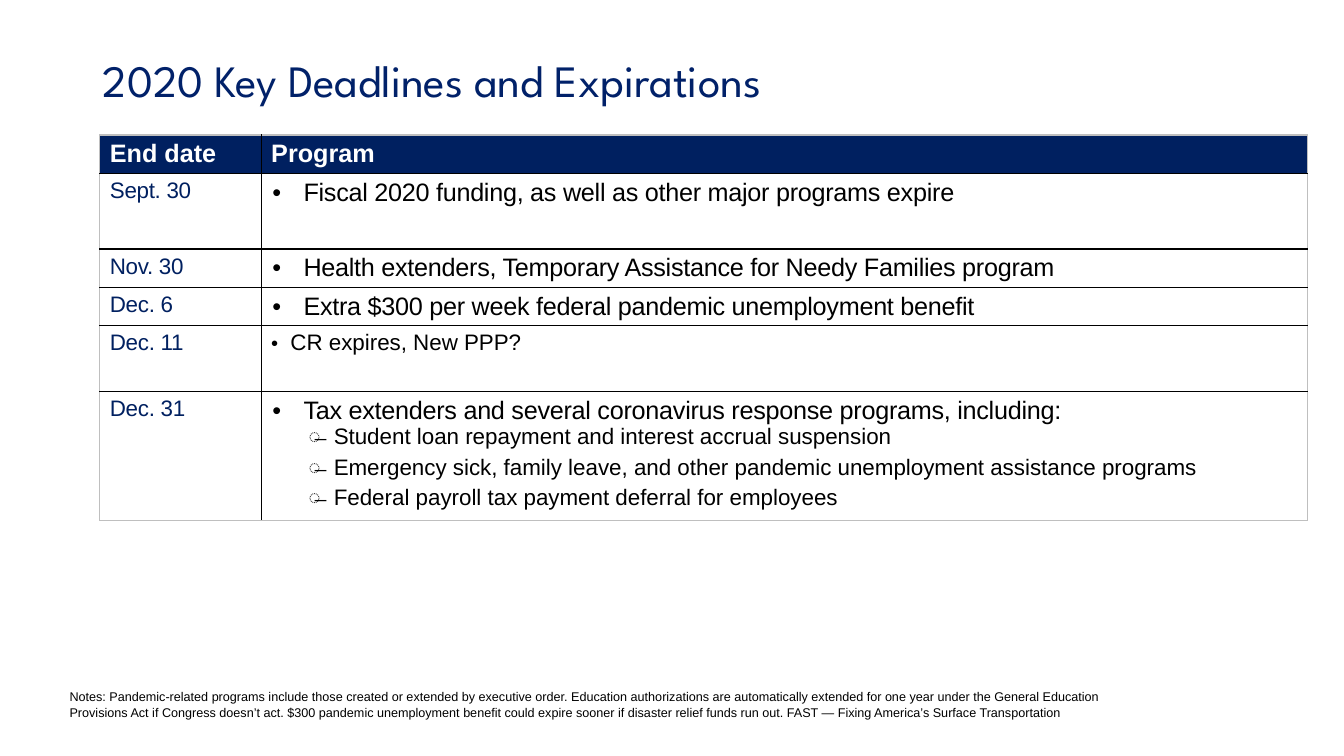
from lxml import etree
from pptx import Presentation
from pptx.dml.color import RGBColor
from pptx.enum.text import MSO_ANCHOR, PP_ALIGN
from pptx.oxml.ns import qn
from pptx.util import Inches, Pt

COLORS = {"title": "012169", "navy": "002060", "black": "000000", "white": "FFFFFF", "gray": "BFBFBF"}
BULLET_STYLES = {
    "main": {"char": "•", "margin": 0.32, "indent": -0.31, "percent": 100, "size": 18, "after": 0, "spacing": -20},
    "small": {"char": "•", "margin": 0.19, "indent": -0.19, "percent": 90, "size": 16, "after": 4, "spacing": 0},
    "sub": {"char": "̶", "margin": 0.62, "indent": -0.25, "percent": 90, "size": 16, "after": 4, "spacing": 0},
}
DEADLINES = [
    ("Sept. 30", 0.75, [("main", "Fiscal 2020 funding, as well as other major programs expire")]),
    ("Nov. 30", 0.38, [("main", "Health extenders, Temporary Assistance for Needy Families program")]),
    ("Dec. 6", 0.38, [("main", "Extra $300 per week federal pandemic unemployment benefit")]),
    ("Dec. 11", 0.65, [("small", "CR expires, New PPP?")]),
    ("Dec. 31", 1.28, [
        ("main", "Tax extenders and several coronavirus response programs, including:"),
        ("sub", "Student loan repayment and interest accrual suspension"),
        ("sub", "Emergency sick, family leave, and other pandemic unemployment assistance programs"),
        ("sub", "Federal payroll tax payment deferral for employees"),
    ]),
]
COLUMN_WIDTHS = [1.6, 10.38]
HEADER_HEIGHT = 0.38


def write_text(paragraph, text, size, color, font_name="Arial", bold=False, spacing=0):
    paragraph.text = text
    for run in paragraph.runs:
        run.font.name = font_name
        run.font.size = Pt(size)
        run.font.bold = bold
        run.font.color.rgb = RGBColor.from_string(COLORS[color])
        if spacing:
            run.font._element.set("spc", str(spacing))


def add_bullet(paragraph, style):
    properties = paragraph._p.get_or_add_pPr()
    properties.set("marL", str(Inches(style["margin"])))
    properties.set("indent", str(Inches(style["indent"])))
    bullet_color = etree.SubElement(properties, qn("a:buClr"))
    etree.SubElement(bullet_color, qn("a:srgbClr"), val=COLORS["black"])
    etree.SubElement(properties, qn("a:buSzPct"), val=str(style["percent"] * 1000))
    etree.SubElement(properties, qn("a:buFont"), typeface="Arial")
    etree.SubElement(properties, qn("a:buChar"), char=style["char"])
    paragraph.space_after = Pt(style["after"])


presentation = Presentation()
presentation.slide_width = Inches(13.33)
presentation.slide_height = Inches(7.5)
slide = presentation.slides.add_slide(presentation.slide_layouts[5])

title = slide.shapes.title
title.left, title.top, title.width, title.height = Inches(0.92), Inches(0.4), Inches(11.5), Inches(0.85)
title.text_frame.vertical_anchor = MSO_ANCHOR.MIDDLE
title_paragraph = title.text_frame.paragraphs[0]
write_text(title_paragraph, "2020 Key Deadlines and Expirations", 32, "title", "League Spartan")
title_paragraph.alignment = PP_ALIGN.LEFT
title_paragraph.line_spacing = 0.9

row_heights = [HEADER_HEIGHT] + [height for date, height, programs in DEADLINES]
table = slide.shapes.add_table(
    len(row_heights), len(COLUMN_WIDTHS), Inches(0.99), Inches(1.34),
    Inches(sum(COLUMN_WIDTHS)), Inches(sum(row_heights)),
).table
table.first_row = False
table.horz_banding = False
for column, width in zip(table.columns, COLUMN_WIDTHS):
    column.width = Inches(width)
for row, height in zip(table.rows, row_heights):
    row.height = Inches(height)

last_row, last_column = len(row_heights) - 1, len(COLUMN_WIDTHS) - 1
for row_index, row in enumerate(table.rows):
    for column_index, cell in enumerate(row.cells):
        outer_edges = {
            "a:lnL": column_index == 0,
            "a:lnR": column_index == last_column,
            "a:lnT": row_index == 0,
            "a:lnB": row_index == last_row,
        }
        cell_properties = cell._tc.get_or_add_tcPr()
        for edge, is_outer in outer_edges.items():
            border = etree.SubElement(cell_properties, qn(edge), w=str(Pt(1)))
            border_fill = etree.SubElement(border, qn("a:solidFill"))
            etree.SubElement(border_fill, qn("a:srgbClr"), val=COLORS["gray" if is_outer else "black"])
        cell.fill.solid()
        cell.fill.fore_color.rgb = RGBColor.from_string(COLORS["navy" if row_index == 0 else "white"])

for column_index, heading in enumerate(["End date", "Program"]):
    write_text(table.cell(0, column_index).text_frame.paragraphs[0], heading, 18, "white", bold=True)

for row_index, (date, height, programs) in enumerate(DEADLINES, start=1):
    write_text(table.cell(row_index, 0).text_frame.paragraphs[0], date, 16, "navy", spacing=-20)
    program_frame = table.cell(row_index, 1).text_frame
    for program_index, (style_name, program) in enumerate(programs):
        paragraph = program_frame.add_paragraph() if program_index else program_frame.paragraphs[0]
        style = BULLET_STYLES[style_name]
        add_bullet(paragraph, style)
        write_text(paragraph, program, style["size"], "black", spacing=style["spacing"])

notes_box = slide.shapes.add_textbox(Inches(0.69), Inches(6.79), Inches(10.74), Inches(0.5))
notes_frame = notes_box.text_frame
notes_frame.word_wrap = True
notes_frame.margin_left = notes_frame.margin_right = 0
write_text(
    notes_frame.paragraphs[0],
    "Notes: Pandemic-related programs include those created or extended by executive order. "
    "Education authorizations are automatically extended for one year under the General Education "
    "Provisions Act if Congress doesn’t act. $300 pandemic unemployment benefit could expire sooner "
    "if disaster relief funds run out. FAST — Fixing America’s Surface Transportation",
    9, "black",
)

presentation.save("out.pptx")
